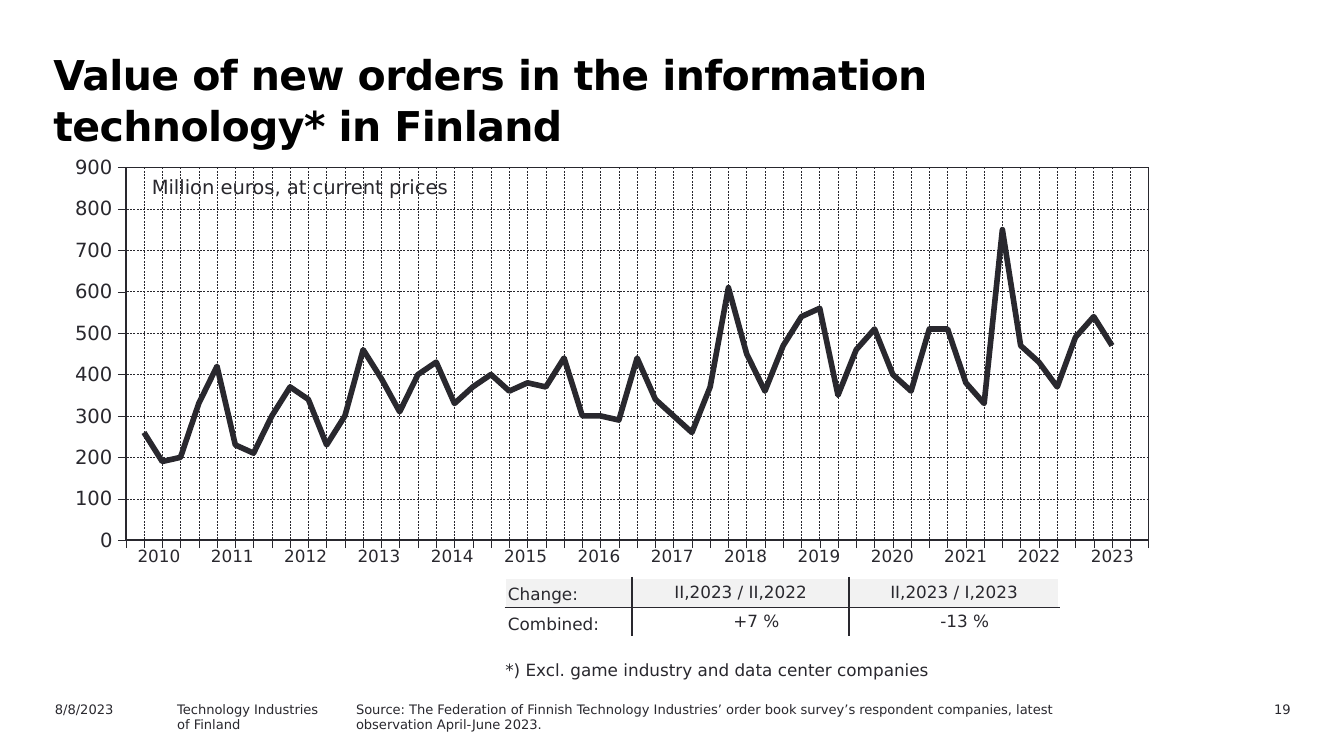
"""Builds a slide with the quarterly value of new orders as a line chart."""
from dataclasses import dataclass

import lxml.etree
import pptx
import pptx.chart.data
import pptx.dml.color
import pptx.enum.chart
import pptx.enum.dml
import pptx.enum.text
import pptx.oxml
import pptx.oxml.ns
import pptx.util

Cm = pptx.util.Cm
Pt = pptx.util.Pt
Align = pptx.enum.text.PP_ALIGN
Anchor = pptx.enum.text.MSO_ANCHOR
qn = pptx.oxml.ns.qn

NO_GRID_STYLE = "{2D5ABB26-0587-4C30-8999-92F81FD0307C}"
FOOTER_TOP = 13.13
YEARS = [str(year) for year in range(2010, 2024)]
ORDERS = [
    None, 260, 190, 200, 330, 420, 230, 210, 300, 370, 340, 230, 300, 460, 390, 310, 400,
    430, 330, 370, 400, 360, 380, 370, 440, 300, 300, 290, 440, 340, 300, 260, 370,
    610, 450, 360, 470, 540, 560, 350, 460, 510, 400, 360, 510, 510, 380, 330, 750,
    470, 430, 370, 490, 540, 470, None, None]
CHANGES = [["Change:", "II,2023 / II,2022", "II,2023 / I,2023"], ["Combined:", "+7 %", "-13 %"]]


@dataclass
class Theme:
    font: str = "DejaVu Sans"
    chart_font: str = "Arial"
    ink: str = "29282E"
    black: str = "000000"
    white: str = "FFFFFF"
    band: str = "F2F2F2"
    title: float = 22
    chart: float = 19.5
    axis: float = 10.5
    body: float = 9
    footer: float = 7


def rgb(value):
    return pptx.dml.color.RGBColor.from_string(value)


def line_xml(tag, color, width):
    return pptx.oxml.parse_xml(
        f'<{tag} {pptx.oxml.ns.nsdecls("a")} w="{Pt(width)}"><a:solidFill>'
        f'<a:srgbClr val="{color}"/></a:solidFill></{tag}>')


class SlideBuilder:
    def __init__(self, slide, theme):
        self.slide = slide
        self.theme = theme

    def style(self, font, size, color=None, bold=False, name=None):
        font.name = name or self.theme.font
        font.size = Pt(size)
        font.bold = bold
        font.color.rgb = rgb(color or self.theme.ink)

    def title(self, text, *box):
        shape = self.slide.shapes.title
        shape.left, shape.top, shape.width, shape.height = map(Cm, box)
        frame = shape.text_frame
        frame.text = text
        frame.word_wrap = True
        frame.auto_size = pptx.enum.text.MSO_AUTO_SIZE.NONE
        frame.vertical_anchor = Anchor.TOP
        frame.margin_left = Cm(0.3)
        paragraph = frame.paragraphs[0]
        paragraph.alignment = Align.LEFT
        paragraph.line_spacing = Pt(27)
        paragraph.space_before = Pt(0)
        self.style(paragraph.font, self.theme.title, self.theme.black, bold=True)
        paragraph.runs[0]._r.get_or_add_rPr().set("spc", "-30")

    def text(self, text, *box, size, align=Align.LEFT, wrap=True):
        frame = self.slide.shapes.add_textbox(*map(Cm, box)).text_frame
        frame.text = text
        frame.word_wrap = wrap
        for paragraph in frame.paragraphs:
            paragraph.alignment = align
            self.style(paragraph.font, size)

    def axis(self, axis):
        axis.major_tick_mark = pptx.enum.chart.XL_TICK_MARK.OUTSIDE
        axis.minor_tick_mark = pptx.enum.chart.XL_TICK_MARK.NONE
        axis.has_major_gridlines = True
        grid = axis.major_gridlines.format.line
        for line, width in ((axis.format.line, 0.22), (grid, 0.25)):
            line.color.rgb = rgb(self.theme.ink)
            line.width = Pt(width)
        grid.dash_style = pptx.enum.dml.MSO_LINE.DASH

    def line_chart(self, values, *box):
        data = pptx.chart.data.CategoryChartData()
        data.categories = [str(number) for number in range(1, len(values) + 1)]
        data.add_series("Series 1", values)
        chart = self.slide.shapes.add_chart(
            pptx.enum.chart.XL_CHART_TYPE.LINE, *map(Cm, box), data).chart
        chart.has_legend = chart.has_title = False
        self.style(chart.font, self.theme.chart, bold=True, name=self.theme.chart_font)
        chart.plots[0].vary_by_categories = False
        series = chart.plots[0].series[0]
        series.smooth = False
        series.marker.style = pptx.enum.chart.XL_MARKER_STYLE.NONE
        series.format.line.color.rgb = rgb(self.theme.ink)
        series.format.line.width = Pt(3)
        self.axis(chart.category_axis)
        chart.category_axis.tick_label_position = pptx.enum.chart.XL_TICK_LABEL_POSITION.NONE
        value_axis = chart.value_axis
        self.axis(value_axis)
        value_axis.minimum_scale, value_axis.maximum_scale = 0, 900
        value_axis.major_unit = 100
        value_axis.tick_labels.number_format = "#,##0"
        value_axis.tick_labels.number_format_is_linked = False
        self.style(value_axis.tick_labels.font, self.theme.axis)
        crossing = lxml.etree.Element(qn("c:crossBetween"), val="midCat")
        value_axis._element.find(qn("c:crosses")).addnext(crossing)
        self.frame_plot(chart._chartSpace.chart.plotArea)

    def frame_plot(self, area):
        for layout in area.findall(qn("c:layout")):
            area.remove(layout)
        layout = lxml.etree.Element(qn("c:layout"))
        manual = lxml.etree.SubElement(layout, qn("c:manualLayout"))
        settings = {"layoutTarget": "inner", "xMode": "edge", "yMode": "edge",
                    "x": "0.068", "y": "0.041", "w": "0.829", "h": "0.833"}
        for name, value in settings.items():
            lxml.etree.SubElement(manual, qn(f"c:{name}"), val=value)
        area.insert(0, layout)
        properties = lxml.etree.SubElement(area, qn("c:spPr"))
        lxml.etree.SubElement(properties, qn("a:noFill"))
        properties.append(line_xml("a:ln", self.theme.ink, 1))

    def table(self, rows, left, top, widths, row_height):
        box = (left, top, sum(widths), row_height * len(rows))
        table = self.slide.shapes.add_table(len(rows), len(widths), *map(Cm, box)).table
        table.first_row = table.horz_banding = False
        table._tbl.tblPr.find(qn("a:tableStyleId")).text = NO_GRID_STYLE
        for column, width in zip(table.columns, widths):
            column.width = Cm(width)
        for row, texts in zip(table.rows, rows):
            row.height = Cm(row_height)
            for cell, text in zip(row.cells, texts):
                cell.text = text
                cell.fill.background()
                paragraph = cell.text_frame.paragraphs[0]
                paragraph.alignment = Align.CENTER
                self.style(paragraph.font, self.theme.body)
        return table

    def change_table(self, rows, left, top, widths, row_height):
        table = self.table(rows, left, top, widths, row_height)
        for r, row in enumerate(table.rows):
            for c, cell in enumerate(row.cells):
                cell.margin_left = cell.margin_right = Cm(0.05)
                cell.margin_top = cell.margin_bottom = Cm(0.05)
                cell.vertical_anchor = Anchor.MIDDLE if c else Anchor.BOTTOM
                if c == 0:
                    cell.text_frame.paragraphs[0].alignment = Align.LEFT
                elif r > 0:
                    cell.text_frame.paragraphs[0].alignment = Align.RIGHT
                    cell.margin_right = Cm(1.32)
                cell.fill.solid()
                cell.fill.fore_color.rgb = rgb(self.theme.white if r else self.theme.band)
                inner = (c > 0, c < len(widths) - 1, r > 0, r < len(rows) - 1)
                for index, (side, ruled) in enumerate(zip("LRTB", inner)):
                    color = self.theme.ink if ruled else self.theme.white
                    cell._tc.get_or_add_tcPr().insert(index, line_xml(f"a:ln{side}", color, 1))


presentation = pptx.Presentation()
presentation.slide_width, presentation.slide_height = Cm(25.4), Cm(14.29)
theme = Theme()
builder = SlideBuilder(presentation.slides.add_slide(presentation.slide_layouts[5]), theme)
builder.title("Value of new orders in the information technology* in Finland", 0.71, 0.79, 22.2, 1.8)
builder.text("19", 22.25, FOOTER_TOP, 2.39, 0.46, size=theme.footer, align=Align.RIGHT)
builder.line_chart(ORDERS, 0.79, 2.82, 23.32, 8.46)
builder.text("Million euros, at current prices", 2.62, 3.18, 6.2, 0.69, size=theme.axis, wrap=False)
builder.change_table(CHANGES, 9.55, 10.92, [2.39, 4.11, 3.96], 0.56)
builder.text("*) Excl. game industry and data center companies", 9.3, 12.34, 9.47, 0.64, size=theme.body)
builder.text("Source: The Federation of Finnish Technology Industries’ order book survey’s "
             "respondent companies, latest observation April-June 2023.",
             6.48, FOOTER_TOP, 13.82, 1.02, size=theme.footer)
builder.text("Technology Industries\nof Finland", 3.1, FOOTER_TOP, 4.57, 0.46, size=theme.footer)
builder.text("8/8/2023", 0.79, FOOTER_TOP, 2.54, 0.46, size=theme.footer)
builder.table([YEARS], 2.31, 10.21, [19.41 / len(YEARS)] * len(YEARS), 0.79)
presentation.save("out.pptx")
